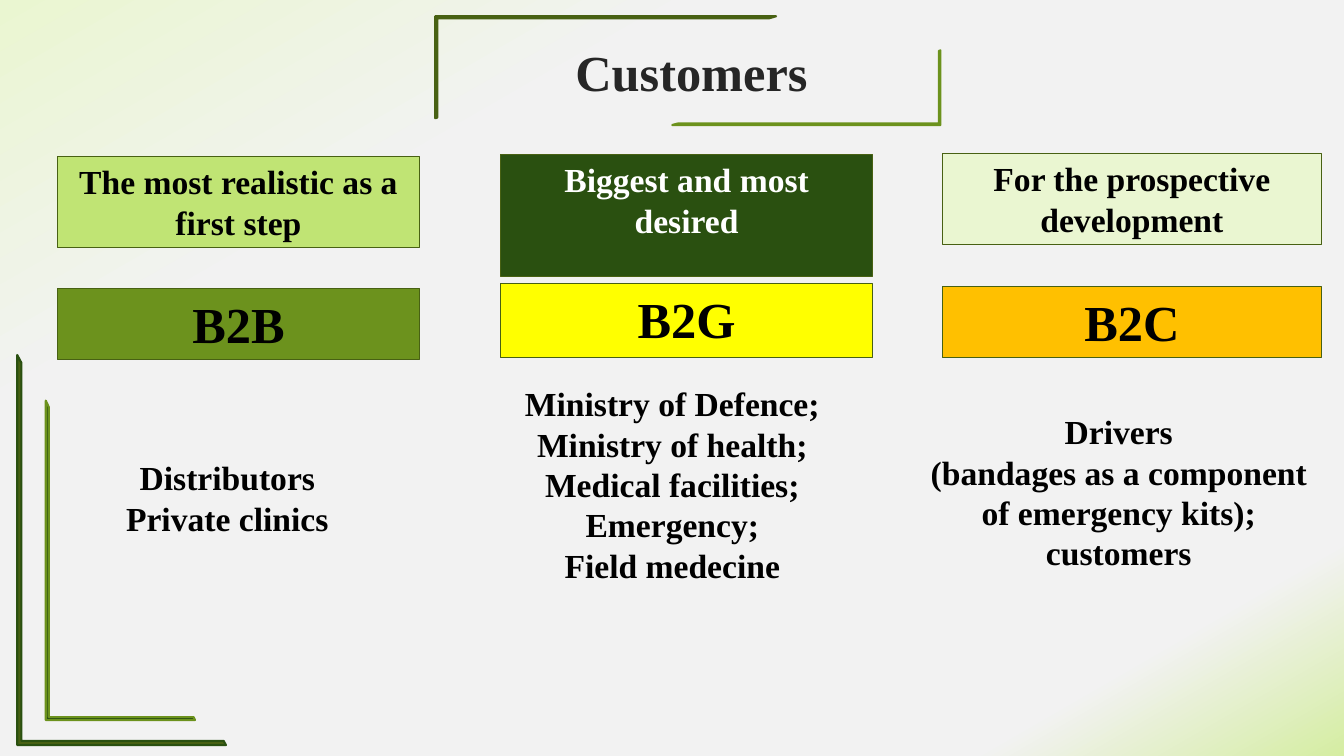
from lxml.etree import SubElement
from pptx import Presentation
from pptx.dml.color import RGBColor
from pptx.enum.shapes import MSO_SHAPE
from pptx.enum.text import MSO_ANCHOR, MSO_AUTO_SIZE, PP_ALIGN
from pptx.oxml.ns import qn
from pptx.util import Cm, Pt


def colour(value):
    """Turn a hex string into a colour."""
    return RGBColor.from_string(value)


class CustomerPage:
    """Hold the style and the current slide."""

    font_name = "Times New Roman"
    outline = "486113"

    def __init__(self, deck):
        """Add a page with a title placeholder."""
        self.page = deck.slides.add_slide(deck.slide_layouts[5])

    def background(self, stops, angle):
        """Fill the background with a linear gradient of (percent, hex) stops."""
        fill = self.page.background.fill
        fill.gradient()
        fill.gradient_angle = 360 - angle
        stop_list = self.page.element.find(".//" + qn("a:gsLst"))
        for stop in list(stop_list):
            stop_list.remove(stop)
        for percent, value in stops:
            stop = SubElement(stop_list, qn("a:gs"), pos=str(percent * 1000))
            SubElement(stop, qn("a:srgbClr"), val=value)

    def set_lines(self, box, lines, size, ink):
        """Put centred bold lines into a box, from its top."""
        frame = box.text_frame
        frame.word_wrap = True
        frame.auto_size = MSO_AUTO_SIZE.NONE
        frame.vertical_anchor = MSO_ANCHOR.TOP
        frame.text = "\n".join(lines)
        for para in frame.paragraphs:
            para.alignment = PP_ALIGN.CENTER
            para.font.name = self.font_name
            para.font.size = Pt(size)
            para.font.bold = True
            para.font.color.rgb = colour(ink)

    def title(self, text, place):
        """Place and format the title."""
        box = self.page.shapes.title
        box.left, box.top, box.width, box.height = map(Cm, place)
        self.set_lines(box, [text], 36, "262626")
        box.text_frame.margin_top = Cm(0.18)

    def shape(self, kind, place, fill, line, weight):
        """Add a filled and outlined preset shape."""
        shape = self.page.shapes.add_shape(kind, *map(Cm, place))
        shape.shadow.inherit = False
        shape.fill.solid()
        shape.fill.fore_color.rgb = colour(fill)
        shape.line.color.rgb = colour(line)
        shape.line.width = Pt(weight)
        return shape

    def label(self, text, place, fill, size, ink="000000"):
        """Add a coloured rectangle with text."""
        box = self.shape(MSO_SHAPE.RECTANGLE, place, fill, self.outline, 0.75)
        self.set_lines(box, [text], size, ink)

    def text(self, lines, place):
        """Add a plain text box."""
        box = self.page.shapes.add_textbox(*map(Cm, place))
        self.set_lines(box, lines, 24, "000000")

    def corner(self, place, fill, line, rotation):
        """Add a thin decorative corner."""
        frame = self.shape(MSO_SHAPE.HALF_FRAME, place, fill, line, 1.5)
        frame.adjustments[0] = frame.adjustments[1] = 0.02
        frame.rotation = rotation


def main():
    """Build the customers slide."""
    deck = Presentation()
    deck.slide_width, deck.slide_height = Cm(33.87), Cm(19.05)
    page = CustomerPage(deck)
    page.background([(0, "EAF6D1"), (27, "F2F2F2"), (86, "F2F2F2"), (100, "D5EDA2")], 60)
    page.title("Customers", (2.82, 0.86, 29.21, 2.31))

    segments = [
        (1.45, 9.12,
         ("The most realistic as a first step", 3.94, 2.31, "C0E474", "000000"),
         ("В2B", 7.26, 1.8, "6C921D"),
         (["Distributors", "Private clinics"], (1.17, 11.4, 9.12, 3.07))),
        (12.62, 9.37,
         ("Biggest and most desired", 3.89, 3.07, "2A5010", "FFFFFF"),
         ("В2G", 7.14, 1.88, "FFFF00"),
         (["Ministry of Defence;", "Ministry of health;", "Medical facilities;",
           "Emergency;", "Field medecine"], (11.89, 9.53, 10.11, 5.38))),
        (23.75, 9.55,
         ("For the prospective development", 3.86, 2.31, "EAF6D1", "000000"),
         ("В2C", 7.21, 1.8, "FFC000"),
         (["Drivers", "(bandages as a component of emergency kits);", "customers"],
          (23.14, 10.24, 10.11, 4.37))),
    ]
    for left, width, outlook, market, customers in segments:
        text, top, height, fill, ink = outlook
        page.label(text, (left, top, width, height), fill, 24, ink)
        text, top, height, fill = market
        page.label(text, (left, top, width, height), fill, 36)
        page.text(*customers)

    corners = [
        ((10.97, 0.41, 8.59, 2.57), "486113", "486113", 0),
        ((-1.85, 11.23, 9.83, 5.26), "486113", "2A5010", 270),
        ((-0.99, 12.24, 8.05, 3.76), "2A5010", "6C921D", 270),
        ((16.94, 1.27, 6.76, 1.88), "2A5010", "6C921D", 180),
    ]
    for corner in corners:
        page.corner(*corner)
    deck.save("out.pptx")


if __name__ == "__main__":
    main()
